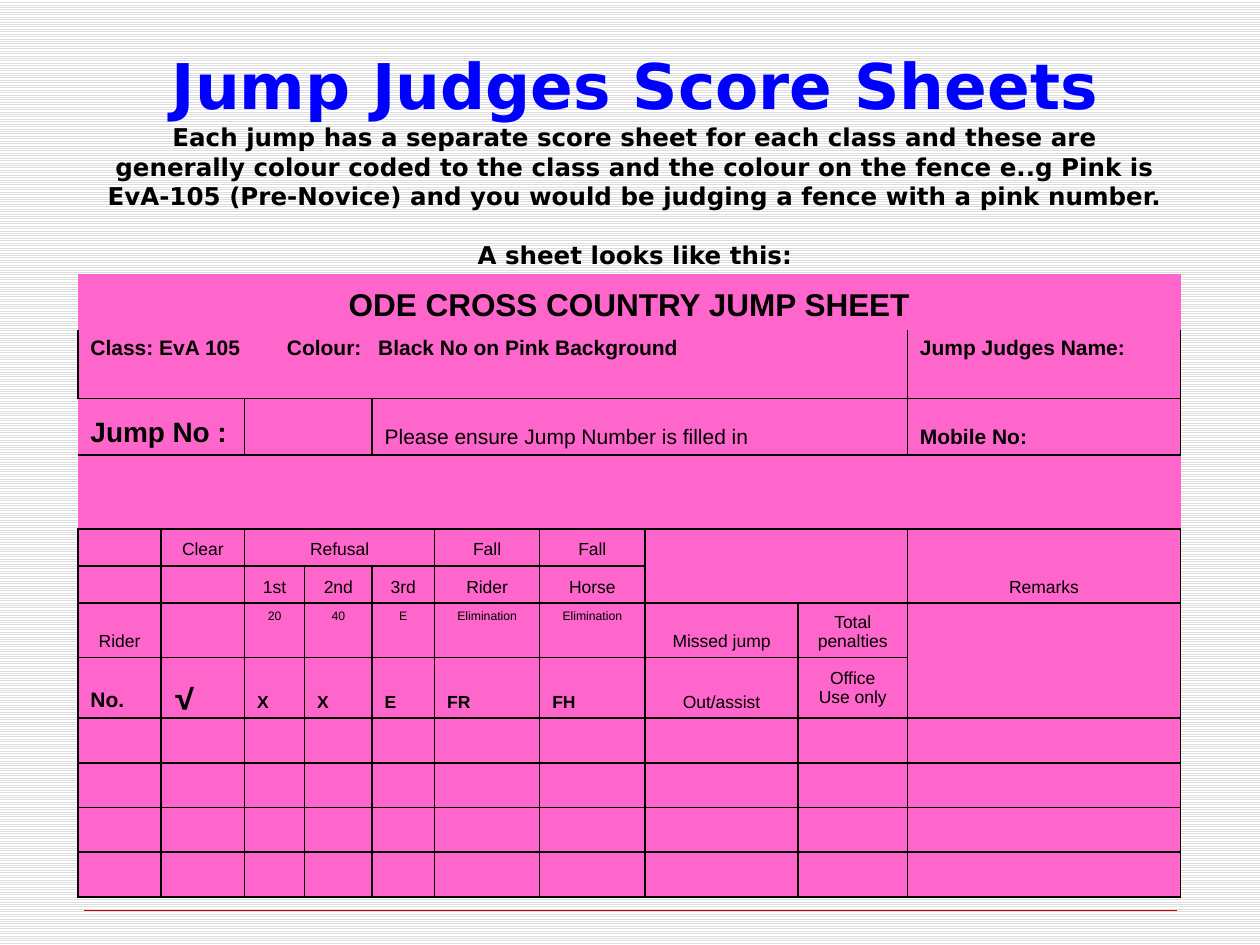
from lxml.etree import SubElement
from pptx import Presentation
from pptx.dml.color import RGBColor
from pptx.enum.dml import MSO_PATTERN as Pattern
from pptx.enum.shapes import MSO_CONNECTOR as Connector
from pptx.enum.text import MSO_ANCHOR as Anchor, MSO_AUTO_SIZE as AutoSize, PP_ALIGN as Align
from pptx.oxml.ns import qn
from pptx.util import Cm, Pt


def color(value):
    return RGBColor.from_string(value)


def add_border(cell, side):
    line = SubElement(cell._tc.get_or_add_tcPr(), qn(f"a:ln{side}"), w=str(Pt(1)))
    SubElement(SubElement(line, qn("a:solidFill")), qn("a:srgbClr"), val="000000")


deck = Presentation()
deck.slide_width, deck.slide_height = Cm(25.4), Cm(19.05)
page = deck.slides.add_slide(deck.slide_layouts[5])

background = page.background.fill
background.patterned()
background.pattern = Pattern.LIGHT_HORIZONTAL
background.fore_color.rgb = color("DDDDDD")
background.back_color.rgb = color("FFFFFF")

rule = page.shapes.add_connector(Connector.STRAIGHT, Cm(1.7), Cm(18.34), Cm(23.72), Cm(18.34))
rule.line.color.rgb = color("CC0000")
rule.line.width = Pt(0.25)
SubElement(rule._element.spPr, qn("a:effectLst"))

title = page.shapes.title
title.left, title.top, title.width, title.height = Cm(1.9), Cm(0.74), Cm(21.8), Cm(5.69)
frame = title.text_frame
frame.word_wrap = True
frame.auto_size = AutoSize.NONE
frame.vertical_anchor = Anchor.TOP
frame.margin_top = Cm(0.2)
heading = [
    ("Jump Judges Score Sheets", 36, "0000FF", 0),
    ("Each jump has a separate score sheet for each class and these are generally colour coded "
     "to the class and the colour on the fence e..g Pink is EvA-105 (Pre-Novice) and you would "
     "be judging a fence with a pink number.", 14, "000000", 0),
    ("A sheet looks like this:", 14, "000000", 16.7),
]
frame.text = "\n".join(text for text, *_ in heading)
for para, (_, size, ink, gap) in zip(frame.paragraphs, heading):
    para.alignment = Align.CENTER
    para.space_before = Pt(gap)
    font = para.runs[0].font
    font.name, font.size, font.bold = "DejaVu Sans", Pt(size), True
    font.color.rgb = color(ink)

widths = [1.68, 1.68, 1.21, 1.36, 1.26, 2.12, 2.12, 3.09, 2.2, 5.51]
heights = [1.12, 1.38, 1.14, 1.5, 0.74, 0.75, 1.1, 1.22] + [0.9] * 4
holder = page.shapes.add_table(len(heights), len(widths), Cm(1.57), Cm(5.53),
                               Cm(sum(widths)), Cm(sum(heights)))
sheet = holder.table
sheet.first_row = sheet.horz_banding = False
sheet._tbl.tblPr.find(qn("a:tableStyleId")).text = "{2D5ABB26-0587-4C30-8999-92F81FD0307C}"
for column, width in zip(sheet.columns, widths):
    column.width = Cm(width)
for row, height in zip(sheet.rows, heights):
    row.height = Cm(height)

merges = [
    (0, 0, 0, 9), (1, 0, 1, 8), (2, 0, 2, 1), (2, 2, 2, 3), (2, 4, 2, 8),
    (4, 2, 4, 4), (4, 7, 5, 8), (4, 9, 5, 9), (6, 9, 7, 9),
]
for top, left, bottom, right in merges:
    sheet.cell(top, left).merge(sheet.cell(bottom, right))

row_borders = {0: "", 1: "LRB", 2: "T", 3: "B"}
cell_borders = {
    (2, 2): "LRTB", (2, 9): "LRTB", (3, 2): "TB", (3, 3): "TB", (3, 9): "TB",
    (4, 0): "LRT", (5, 0): "LRB",
}
for r in range(len(heights)):
    for c in range(len(widths)):
        cell = sheet.cell(r, c)
        if not cell.is_spanned:
            for side in cell_borders.get((r, c), row_borders.get(r, "LRTB")):
                add_border(cell, side)
        cell.fill.solid()
        cell.fill.fore_color.rgb = color("FF66CC")
        SubElement(cell.text_frame.paragraphs[0]._p, qn("a:endParaRPr"), sz="1000")

left, center = Align.LEFT, Align.CENTER
top, middle, bottom = Anchor.TOP, Anchor.MIDDLE, Anchor.BOTTOM
groups = [
    (18, True, center, bottom, {(0, 0): "ODE CROSS COUNTRY JUMP SHEET"}),
    (12, True, left, top, {
        (1, 0): "Class: EvA 105\tColour:\tBlack No on Pink Background",
        (1, 9): "Jump Judges Name:"}),
    (16, True, left, bottom, {(2, 0): "Jump No :"}),
    (12, False, left, bottom, {(2, 4): "Please ensure Jump Number is filled in"}),
    (12, True, left, bottom, {(2, 9): "Mobile No:", (7, 0): "No."}),
    (10, False, center, bottom, {
        (4, 1): "Clear", (4, 2): "Refusal", (4, 5): "Fall", (4, 6): "Fall", (4, 9): "Remarks",
        (5, 2): "1st", (5, 3): "2nd", (5, 4): "3rd", (5, 5): "Rider", (5, 6): "Horse",
        (6, 0): "Rider", (6, 7): "Missed jump", (6, 8): "Total\npenalties",
        (7, 7): "Out/assist"}),
    (7, False, center, top, {
        (6, 2): "20", (6, 3): "40", (6, 4): "E", (6, 5): "Elimination", (6, 6): "Elimination"}),
    (14, True, left, bottom, {(7, 1): "√"}),
    (10, True, left, bottom, {
        (7, 2): "X", (7, 3): "X", (7, 4): "E", (7, 5): "FR", (7, 6): "FH"}),
    (10, False, center, middle, {(7, 8): "Office\nUse only"}),
]
for size, bold, alignment, anchor, entries in groups:
    for (r, c), text in entries.items():
        cell = sheet.cell(r, c)
        cell.text_frame.text = text
        cell.vertical_anchor = anchor
        for para in cell.text_frame.paragraphs:
            para.alignment = alignment
            for span in para.runs:
                font = span.font
                font.name = "Montserrat" if text == "√" else "Arial"
                font.size, font.bold = Pt(size), bold
                font.color.rgb = color("000000")

class_line = sheet.cell(1, 0).text_frame.paragraphs[0]
tab_list = SubElement(class_line._p.get_or_add_pPr(), qn("a:tabLst"))
for position in (3.96, 5.8):
    SubElement(tab_list, qn("a:tab"), pos=str(Cm(position)), algn="l")

deck.save("out.pptx")
